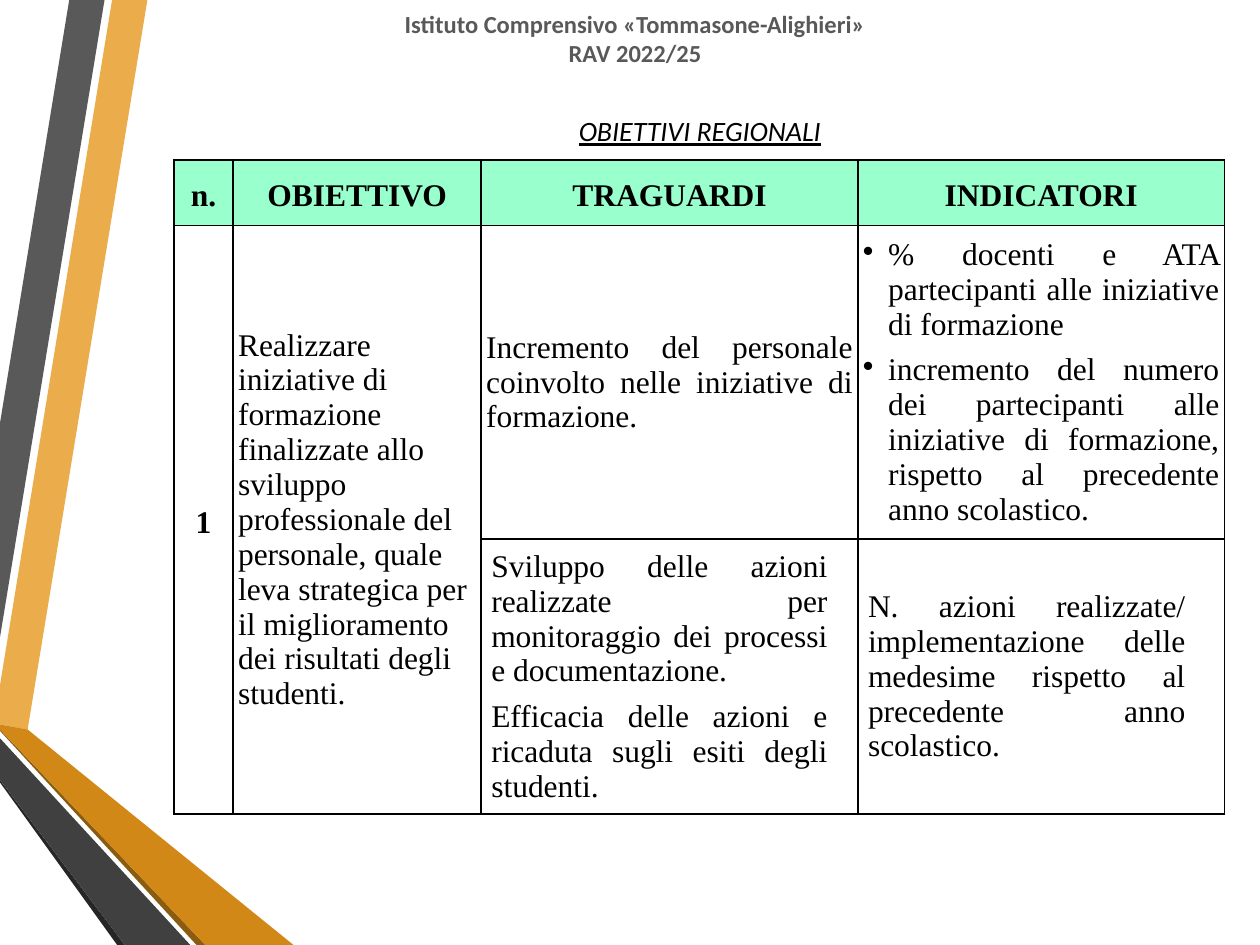
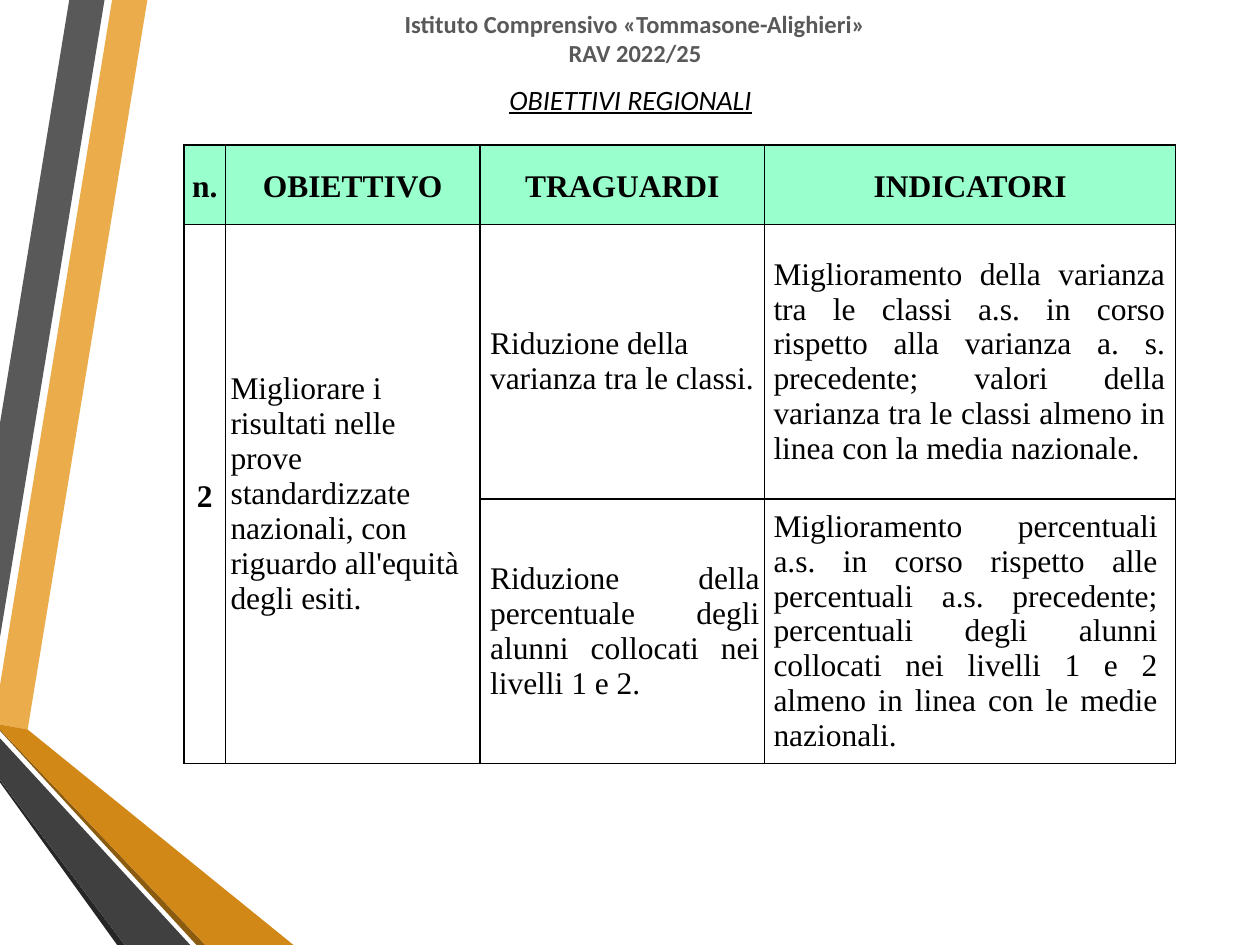
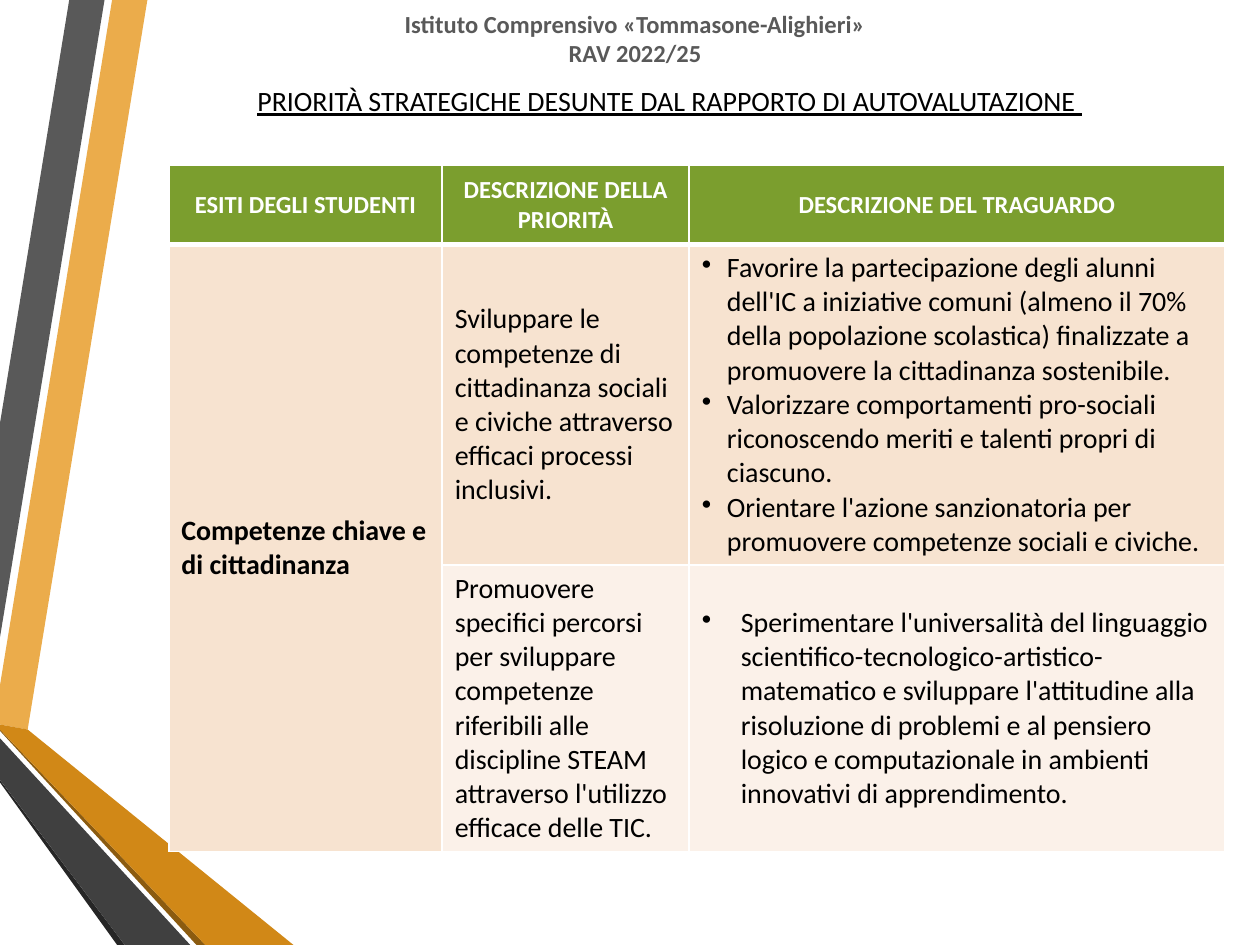
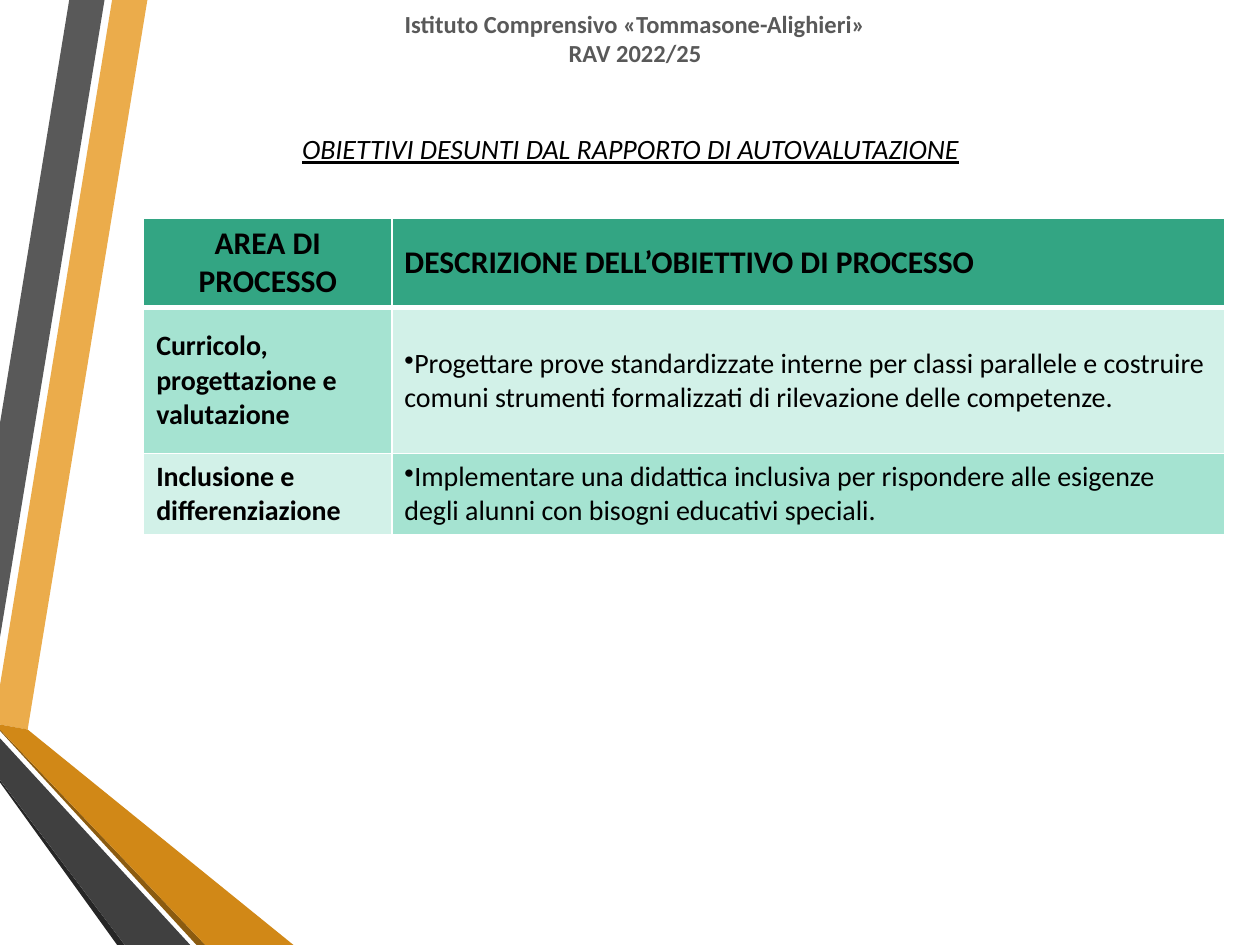
from dataclasses import dataclass

import pptx
import pptx.dml.color
import pptx.enum.text
import pptx.oxml
import pptx.oxml.ns
import pptx.util
from pptx.util import Inches, Pt

RGBColor = pptx.dml.color.RGBColor
LEFT = pptx.enum.text.PP_ALIGN.LEFT
CENTER = pptx.enum.text.PP_ALIGN.CENTER
JUSTIFY = pptx.enum.text.PP_ALIGN.JUSTIFY
MIDDLE = pptx.enum.text.MSO_ANCHOR.MIDDLE

BLACK = RGBColor(0x00, 0x00, 0x00)
WHITE = RGBColor(0xFF, 0xFF, 0xFF)
GREY = RGBColor(0x59, 0x59, 0x59)
DARK_GREY = RGBColor(0x40, 0x40, 0x40)
NEAR_BLACK = RGBColor(0x26, 0x26, 0x26)
AMBER = RGBColor(0xEB, 0xAC, 0x4B)
OCHRE = RGBColor(0xD1, 0x88, 0x17)
BROWN = RGBColor(0x8B, 0x5B, 0x10)
MINT = RGBColor(0x99, 0xFF, 0xCC)
OLIVE = RGBColor(0x7B, 0x9E, 0x2E)
PEACH = RGBColor(0xF7, 0xE3, 0xD0)
PALE_PEACH = RGBColor(0xFB, 0xF1, 0xE9)
GREEN = RGBColor(0x33, 0xA5, 0x83)
AQUA = RGBColor(0xA5, 0xE3, 0xD1)
PALE_AQUA = RGBColor(0xD2, 0xF1, 0xE8)

SANS = "Calibri"
SERIF = "Times New Roman"

HEADER_LINES = ["Istituto Comprensivo «Tommasone-Alighieri»", "RAV 2022/25"]
HEADER_PLACE = (1.14, 0.02, 7.8, 0.57)

BANDS = [
    (AMBER, [(0, 5.44), (0, 5.75), (0.22, 5.79), (1.17, 0), (0.89, 0)]),
    (GREY, [(0.83, 0), (0.55, 0), (0, 3.36), (0, 5.06)]),
    (NEAR_BLACK, [(0, 6.19), (0, 6.21), (0.93, 7.5), (0.99, 7.5)]),
    (BROWN, [(0, 5.79), (0, 5.8), (1.56, 7.5), (1.63, 7.5)]),
    (OCHRE, [(0, 5.79), (1.63, 7.5), (2.33, 7.5), (0.22, 5.79), (0, 5.75)]),
    (DARK_GREY, [(0, 6.19), (0.99, 7.5), (1.51, 7.5), (0, 5.86)]),
]


@dataclass
class Passage:
    """One paragraph of a cell; indents in inches, space after in points."""
    text: str
    align: int = LEFT
    bold: bool = False
    bullet: bool = False
    left: float = 0
    hanging: float = 0
    right: float = 0
    after: float = 0
    spacing: float = 1.0


@dataclass
class TableStyle:
    font: str
    header_size: int
    body_size: int
    header_color: RGBColor
    border: RGBColor
    header_rule: float
    margins: tuple


REGIONAL = TableStyle(SERIF, 18, 18, BLACK, BLACK, 1, (0.04, 0))
PRIORITY = TableStyle(SANS, 14, 16, WHITE, WHITE, 3, (0.1, 0.05))
PROCESS = TableStyle(SANS, 18, 16, BLACK, WHITE, 3, (0.1, 0.05))


def heading(text, align=CENTER, spacing=1.0):
    return [Passage(text, align, bold=True, spacing=spacing)]


def plain(text, **options):
    return [Passage(text, **options)]


def serif(text, align=JUSTIFY, after=6, **options):
    return Passage(text, align, after=after, **options)


def bullet(text, hanging=0, align=LEFT, after=0):
    return Passage(text, align, bullet=True, left=hanging, hanging=hanging, after=after)


REGIONAL_HEADER = [heading(text, spacing=1.15)
                   for text in ("n.", "OBIETTIVO", "TRAGUARDI", "INDICATORI")]
REGIONAL_FILLS = [[MINT] * 4, [None] * 4, [None] * 4]

# A None cell is covered by the cell above it.
SLIDES = [
    {
        "title": "OBIETTIVI REGIONALI", "italic": True,
        "title_place": (1.46, 0.85, 8.19, 0.37),
        "style": REGIONAL, "corner": (1.38, 1.27),
        "columns": [0.47, 1.97, 2.99, 2.91], "rows": [0.52, 2.49, 2.18],
        "fills": REGIONAL_FILLS,
        "cells": [
            REGIONAL_HEADER,
            [heading("1", spacing=1.15),
             [serif("Realizzare iniziative di formazione finalizzate allo sviluppo "
                    "professionale del personale, quale leva strategica per il "
                    "miglioramento dei risultati degli studenti.", LEFT)],
             [serif("Incremento del personale coinvolto nelle iniziative di formazione.")],
             [bullet("% docenti e ATA partecipanti alle iniziative di formazione",
                     0.2, JUSTIFY, 6),
              bullet("incremento del numero dei partecipanti alle iniziative di "
                     "formazione, rispetto al precedente anno scolastico.",
                     0.2, JUSTIFY, 6)]],
            [None, None,
             [serif("Sviluppo delle azioni realizzate per monitoraggio dei processi "
                    "e documentazione.", left=0.04, right=0.2),
              serif("Efficacia delle azioni e ricaduta sugli esiti degli studenti.",
                    left=0.04, right=0.2)],
             [serif("N. azioni realizzate/ implementazione delle medesime rispetto al "
                    "precedente anno scolastico.", left=0.04, right=0.27)]],
        ],
    },
    {
        "title": "OBIETTIVI REGIONALI", "italic": True,
        "title_place": (0.91, 0.6, 8.19, 0.37),
        "style": REGIONAL, "corner": (1.46, 1.15),
        "columns": [0.33, 2.02, 2.26, 3.26], "rows": [0.63, 2.18, 2.1],
        "fills": REGIONAL_FILLS,
        "cells": [
            REGIONAL_HEADER,
            [heading("2", spacing=1.15),
             [serif("Migliorare i risultati nelle prove standardizzate nazionali, con "
                    "riguardo all'equità degli esiti.", LEFT)],
             [serif("Riduzione della varianza tra le classi.", LEFT, left=0.04)],
             [serif("Miglioramento della varianza tra le classi a.s. in corso rispetto "
                    "alla varianza a. s. precedente; valori della varianza tra le classi "
                    "almeno in linea con la media nazionale.",
                    left=0.03, right=0.04, after=33)]],
            [None, None,
             [serif("Riduzione della percentuale degli alunni collocati nei livelli "
                    "1 e 2.", left=0.04)],
             [serif("Miglioramento percentuali a.s. in corso rispetto alle percentuali "
                    "a.s. precedente; percentuali degli alunni collocati nei livelli "
                    "1 e 2 almeno in linea con le medie nazionali.",
                    left=0.03, right=0.1)]],
        ],
    },
    {
        "title": "PRIORITÀ STRATEGICHE DESUNTE DAL RAPPORTO DI AUTOVALUTAZIONE ",
        "italic": False, "title_place": (1.22, 0.61, 8.19, 0.37),
        "style": PRIORITY, "corner": (1.34, 1.31),
        "columns": [2.17, 1.96, 4.25], "rows": [0.63, 2.51, 2.23],
        "fills": [[OLIVE] * 3, [PEACH] * 3, [PEACH, PALE_PEACH, PALE_PEACH]],
        "cells": [
            [heading("ESITI DEGLI STUDENTI"), heading("DESCRIZIONE DELLA PRIORITÀ"),
             heading("DESCRIZIONE DEL TRAGUARDO")],
            [heading("Competenze chiave e di cittadinanza", LEFT),
             plain("Sviluppare le competenze di cittadinanza sociali e civiche "
                   "attraverso efficaci processi inclusivi.", after=19.5),
             [bullet("Favorire la partecipazione degli alunni dell'IC a iniziative "
                     "comuni (almeno il 70% della popolazione scolastica) finalizzate a "
                     "promuovere la cittadinanza sostenibile.", 0.2),
              bullet("Valorizzare comportamenti pro-sociali riconoscendo meriti e "
                     "talenti propri di ciascuno.", 0.2),
              bullet("Orientare l'azione sanzionatoria per promuovere competenze "
                     "sociali e civiche.", 0.2)]],
            [None,
             plain("Promuovere specifici percorsi per sviluppare competenze riferibili "
                   "alle discipline STEAM attraverso l'utilizzo efficace delle TIC."),
             [bullet("Sperimentare l'universalità del linguaggio "
                     "scientifico-tecnologico-artistico-matematico e sviluppare "
                     "l'attitudine alla risoluzione di problemi e al pensiero logico e "
                     "computazionale in ambienti innovativi di apprendimento.", 0.31)]],
        ],
    },
    {
        "title": "OBIETTIVI DESUNTI DAL RAPPORTO DI AUTOVALUTAZIONE", "italic": True,
        "title_place": (0.91, 0.99, 8.19, 0.37),
        "style": PROCESS, "corner": (1.14, 1.73),
        "columns": [1.97, 6.61], "rows": [0.69, 1.16, 0.64],
        "fills": [[GREEN] * 2, [AQUA, PALE_AQUA], [PALE_AQUA, AQUA]],
        "cells": [
            [heading("AREA DI PROCESSO"),
             heading("DESCRIZIONE DELL’OBIETTIVO DI PROCESSO", LEFT)],
            [heading("Curricolo, progettazione e valutazione", LEFT),
             [bullet("Progettare prove standardizzate interne per classi parallele e "
                     "costruire comuni strumenti formalizzati di rilevazione delle "
                     "competenze.")]],
            [heading("Inclusione e differenziazione", LEFT),
             [bullet("Implementare una didattica inclusiva per rispondere alle esigenze "
                     "degli alunni con bisogni educativi speciali.")]],
        ],
    },
]


def set_font(paragraph, name, size, color, bold=False, italic=False, underline=False):
    font = paragraph.font
    font.name, font.size, font.color.rgb = name, Pt(size), color
    font.bold, font.italic, font.underline = bold, italic, underline


def move_bands_to_layout(slide, layout):
    """Draw the side bands on a slide, then hand them to the layout all slides share."""
    for number, (color, points) in enumerate(BANDS, start=101):
        corners = [(Inches(x), Inches(y)) for x, y in points]
        builder = slide.shapes.build_freeform(*corners[0])
        builder.add_line_segments(corners[1:], close=True)
        band = builder.convert_to_shape()
        band.shadow.inherit = False
        band.fill.solid()
        band.fill.fore_color.rgb = color
        band.line.fill.background()
        band.element.nvSpPr.cNvPr.set("id", str(number))
        layout.shapes.element.append(band.element)


def add_header(slide):
    box = slide.shapes.add_textbox(*map(Inches, HEADER_PLACE))
    box.text_frame.word_wrap = True
    box.text_frame.text = "\n".join(HEADER_LINES)
    for paragraph in box.text_frame.paragraphs:
        paragraph.alignment = CENTER
        set_font(paragraph, SANS, 14, GREY, bold=True)


def set_title(slide, text, place, italic):
    title = slide.shapes.title
    title.left, title.top, title.width, title.height = map(Inches, place)
    frame = title.text_frame
    frame.text = text
    frame.auto_size = pptx.enum.text.MSO_AUTO_SIZE.NONE
    frame.word_wrap = True
    paragraph = frame.paragraphs[0]
    paragraph.alignment = CENTER
    set_font(paragraph, SANS, 16, BLACK, italic=italic, underline=True)


def set_borders(cell, color, widths):
    """Widths in points, keyed by side letter in schema order: L, R, T, B."""
    properties = cell._tc.get_or_add_tcPr()
    for side, width in widths.items():
        properties.append(pptx.oxml.parse_xml(
            f'<a:ln{side} {pptx.oxml.ns.nsdecls("a")} w="{Pt(width)}">'
            f'<a:solidFill><a:srgbClr val="{color}"/></a:solidFill></a:ln{side}>'))


def write_passage(paragraph, passage, font, size, color):
    paragraph.text = passage.text
    paragraph.alignment = passage.align
    paragraph.line_spacing = passage.spacing
    paragraph.space_after = Pt(passage.after)
    set_font(paragraph, font, size, color, passage.bold)
    properties = paragraph._p.get_or_add_pPr()
    properties.set("marL", str(Inches(passage.left)))
    properties.set("marR", str(Inches(passage.right)))
    properties.set("indent", str(-Inches(passage.hanging)))
    if passage.bullet:
        mark = pptx.oxml.parse_xml(f'<a:buChar {pptx.oxml.ns.nsdecls("a")} char="•"/>')
        properties.insert_element_before(mark, "a:tabLst", "a:defRPr", "a:extLst")


def format_cell(cell, style, row, fill):
    set_borders(cell, style.border, {
        "L": 1, "R": 1,
        "T": style.header_rule if row == 1 else 1,
        "B": style.header_rule if row == 0 else 1,
    })
    if fill is None:
        cell.fill.background()
    else:
        cell.fill.solid()
        cell.fill.fore_color.rgb = fill
    side, end = map(Inches, style.margins)
    cell.margin_left = cell.margin_right = side
    cell.margin_top = cell.margin_bottom = end
    cell.vertical_anchor = MIDDLE


def fill_cell(cell, passages, style, row):
    size = style.header_size if row == 0 else style.body_size
    color = style.header_color if row == 0 else BLACK
    frame = cell.text_frame
    for index, passage in enumerate(passages):
        paragraph = frame.add_paragraph() if index else frame.paragraphs[0]
        write_passage(paragraph, passage, style.font, size, color)


def add_objectives_table(slide, content):
    columns, rows, style = content["columns"], content["rows"], content["style"]
    frame = slide.shapes.add_table(
        len(rows), len(columns), *map(Inches, content["corner"]),
        Inches(sum(columns)), Inches(sum(rows)))
    table = frame.table
    table.first_row = table.horz_banding = False
    for column, width in zip(table.columns, columns):
        column.width = Inches(width)
    for table_row, height in zip(table.rows, rows):
        table_row.height = Inches(height)
    for row, cells in enumerate(content["cells"]):
        for column, passages in enumerate(cells):
            cell = table.cell(row, column)
            format_cell(cell, style, row, content["fills"][row][column])
            if passages is None:
                table.cell(row - 1, column).merge(cell)
            else:
                fill_cell(cell, passages, style, row)


def main():
    deck = pptx.Presentation()
    deck.slide_width, deck.slide_height = Inches(10), Inches(7.5)
    layout = deck.slide_layouts.get_by_name("Title Only")
    for index, content in enumerate(SLIDES):
        slide = deck.slides.add_slide(layout)
        if index == 0:
            move_bands_to_layout(slide, layout)
        set_title(slide, content["title"], content["title_place"], content["italic"])
        add_objectives_table(slide, content)
        add_header(slide)
    deck.save("out.pptx")


if __name__ == "__main__":
    main()
